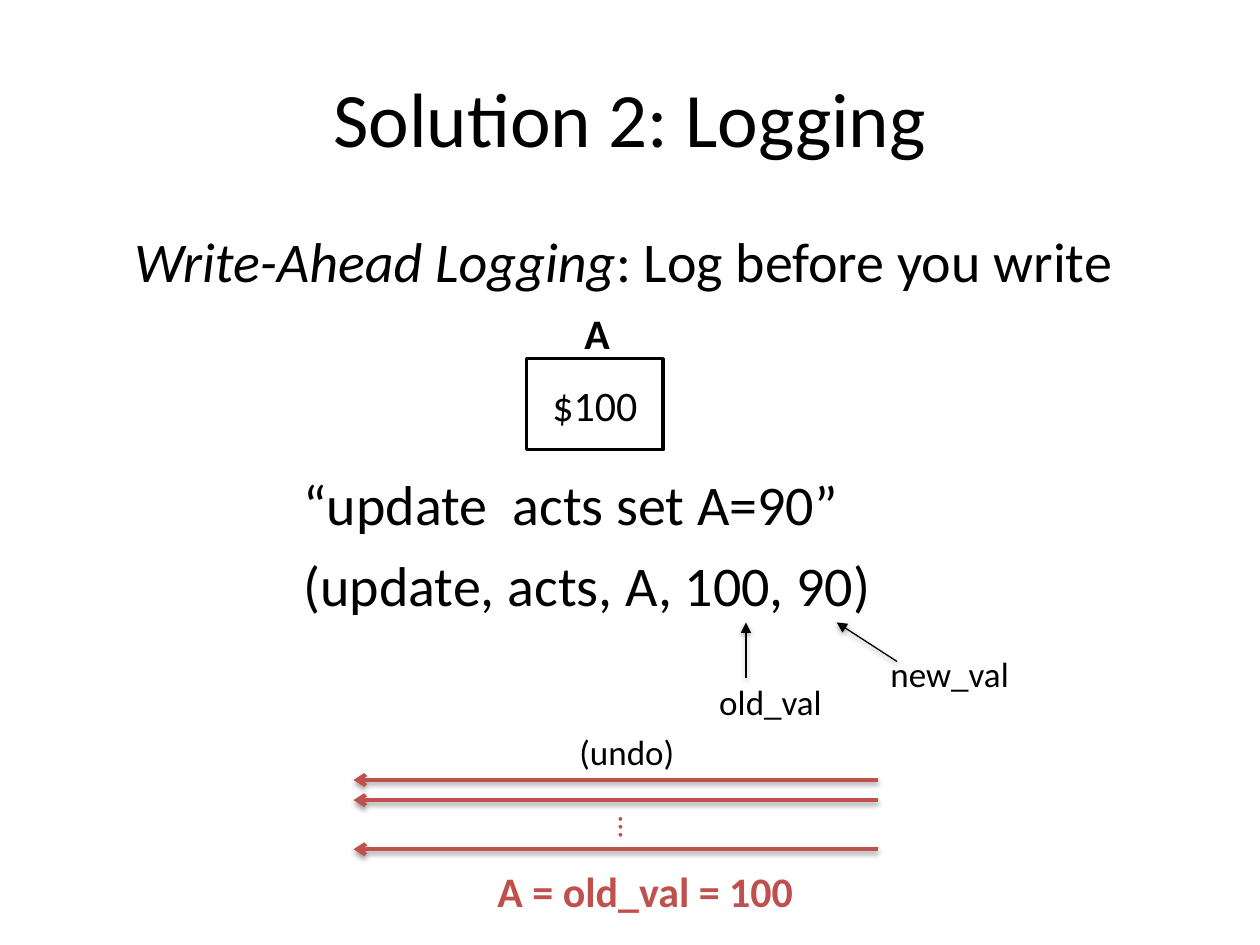
import pptx
import pptx.util
import pptx.dml.color
import pptx.enum.shapes
import pptx.enum.text
import pptx.oxml
import pptx.oxml.ns

Pt = pptx.util.Pt
RGBColor = pptx.dml.color.RGBColor
ALIGN = pptx.enum.text.PP_ALIGN
ANCHOR = pptx.enum.text.MSO_ANCHOR

BLACK = RGBColor(0x00, 0x00, 0x00)
WHITE = RGBColor(0xFF, 0xFF, 0xFF)
RED = RGBColor(0xC0, 0x50, 0x4D)

SHADOW_XML = (
    f'<a:effectLst {pptx.oxml.ns.nsdecls("a")}>'
    '<a:outerShdw blurRad="39370" dist="20320" dir="5400000" rotWithShape="0">'
    '<a:srgbClr val="000000"><a:alpha val="38000"/></a:srgbClr>'
    '</a:outerShdw></a:effectLst>'
)


def style_font(paragraph, size, color=BLACK, bold=False):
    """Set the slide's font on a paragraph."""
    font = paragraph.font
    font.name = "Calibri"
    font.size = Pt(size)
    font.bold = bold
    font.color.rgb = color


def add_text(slide, text, box, size, color=BLACK, bold=False, wrap=False):
    """Add a one-paragraph text box at (left, top, width, height)."""
    label = slide.shapes.add_textbox(*map(Pt, box))
    label.text_frame.word_wrap = wrap
    paragraph = label.text_frame.paragraphs[0]
    paragraph.text = text
    style_font(paragraph, size, color, bold)
    return label


def add_arrow(slide, tip, tail, color, width, head):
    """Draw a shadowed line with an arrowhead at its tip."""
    arrow = slide.shapes.add_connector(
        pptx.enum.shapes.MSO_CONNECTOR.STRAIGHT, *map(Pt, (*tip, *tail)))
    arrow.line.color.rgb = color
    arrow.line.width = Pt(width)
    arrow.line._get_or_add_ln().append(pptx.oxml.parse_xml(
        f'<a:headEnd {pptx.oxml.ns.nsdecls("a")} type="{head}"/>'))
    arrow._element.spPr.append(pptx.oxml.parse_xml(SHADOW_XML))


def add_heading(slide, left, top, width):
    """Place the title and the definition of write-ahead logging."""
    title = add_text(slide, "Solution 2: Logging", (left, top, width, 90), 44, wrap=True)
    title.text_frame.vertical_anchor = ANCHOR.MIDDLE
    title.text_frame.paragraphs[0].alignment = ALIGN.CENTER

    definition = add_text(
        slide, "", (left + 33.8, top + 104.4, width - 59.8, 52), 32, wrap=True)
    paragraph = definition.text_frame.paragraphs[0]
    paragraph.space_before = Pt(6.4)
    term = paragraph.add_run()
    term.text = "Write-Ahead Logging"
    term.font.italic = True
    paragraph.add_run().text = ": Log before you write"


def add_account(slide, left, top, width):
    """Draw account A as a labelled box holding its balance."""
    balance = slide.shapes.add_shape(
        pptx.enum.shapes.MSO_SHAPE.RECTANGLE,
        Pt(left), Pt(top + 33), Pt(width), Pt(52))
    balance.shadow.inherit = False
    balance.fill.solid()
    balance.fill.fore_color.rgb = WHITE
    balance.line.color.rgb = BLACK
    balance.line.width = Pt(2)
    balance.text_frame.vertical_anchor = ANCHOR.MIDDLE
    paragraph = balance.text_frame.paragraphs[0]
    paragraph.text = "$100"
    paragraph.alignment = ALIGN.CENTER
    style_font(paragraph, 24)
    add_text(slide, "A", (left + 25.9, top, 29.5, 36), 24, bold=True)


def add_log_entry(slide, left, top):
    """Place the statement, its log record and the two value callouts."""
    add_text(slide, "“update  acts set A=90”", (left, top, 324, 46), 32)
    add_text(slide, "(update, acts, A, 100, 90)", (left, top + 46, 342, 46), 32)
    tip_y = top + 90.7
    add_arrow(slide, (left + 260, tip_y), (left + 260, tip_y + 31.7),
              BLACK, 0.75, "triangle")
    add_arrow(slide, (left + 311.8, tip_y), (left + 346.3, tip_y + 22.3),
              BLACK, 0.75, "triangle")
    add_text(slide, "old_val", (left + 237.6, top + 120.2, 74, 32), 20)
    add_text(slide, "new_val", (left + 335.5, top + 104.4, 83, 32), 20)


def add_undo(slide, left, top, width):
    """Draw the undo steps as stacked arrows with the restored value below."""
    add_text(slide, "(undo)", (left + 122, top, 69, 32), 20)
    for offset in (31.7, 43.2, 71.3):
        step_y = top + offset
        add_arrow(slide, (left, step_y), (left + width, step_y), RED, 2.25, "arrow")
    ellipsis = add_text(
        slide, "…", (left + 143.6, top + 46, 30, 29), 18, RED, wrap=True)
    ellipsis.rotation = 90
    add_text(slide, "A = old_val = 100", (left + 75.2, top + 77, 186, 36), 24, RED, bold=True)


def main():
    """Build the slide and save it."""
    deck = pptx.Presentation()
    deck.slide_width, deck.slide_height = Pt(720), Pt(540)
    slide = deck.slides.add_slide(deck.slide_layouts[6])
    add_heading(slide, 36, 21.6, 648)
    add_account(slide, 301, 172, 78)
    add_log_entry(slide, 166.3, 265)
    add_undo(slide, 202, 414, 299.5)
    deck.save("out.pptx")


if __name__ == "__main__":
    main()
